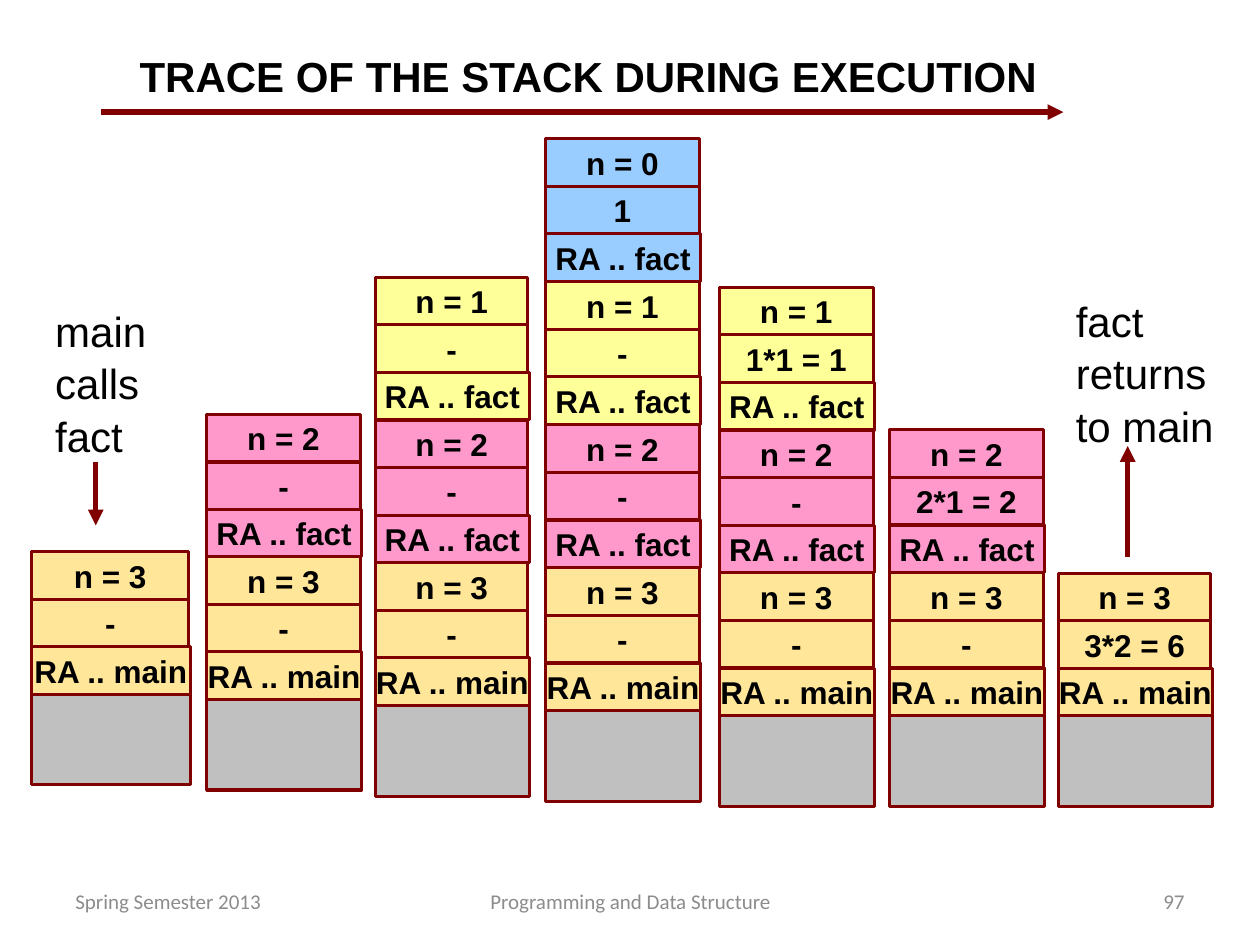
from dataclasses import dataclass

from lxml import etree
from pptx import Presentation
from pptx import util as u
from pptx.dml.color import RGBColor
from pptx.enum import shapes, text
from pptx.oxml.ns import qn

Inches = u.Inches
ALIGN, ANCHOR = text.PP_ALIGN, text.MSO_ANCHOR


@dataclass(frozen=True)
class Theme:
    font: str = "Arial"
    footer_font: str = "Calibri"
    ink: str = "000000"
    muted: str = "8C8C8C"
    line: str = "800000"
    base: str = "C0C0C0"
    frames: tuple = ("FFE699", "FF99CC", "FFFF99", "99CCFF")
    heading_size: int = 24
    cell_size: int = 18
    footer_size: int = 12
    border: float = 1.75
    arrow: float = 3


THEME = Theme()
BASE_HEIGHT = 0.72
RA_OVERHANG = 0.01

# Box (left, top, width, height) of each stack, and the (n, value) of its
# frames from the bottom up.
STACKS = [
    ((0.25, 4.38, 1.26, 1.85), [(3, "-")]),
    ((1.64, 3.29, 1.23, 2.98), [(3, "-"), (2, "-")]),
    ((2.98, 2.20, 1.22, 4.12), [(3, "-"), (2, "-"), (1, "-")]),
    ((4.33, 1.10, 1.23, 5.26), [(3, "-"), (2, "-"), (1, "-"), (0, "1")]),
    ((5.71, 2.28, 1.23, 4.12), [(3, "-"), (2, "-"), (1, "1*1 = 1")]),
    ((7.06, 3.41, 1.23, 2.99), [(3, "-"), (2, "2*1 = 2")]),
    ((8.40, 4.55, 1.22, 1.85), [(3, "3*2 = 6")]),
]


def inches(box):
    return [Inches(v) for v in box]


def write(sp, words, *, size, font=THEME.font, color=THEME.ink, bold=False,
          align=ALIGN.LEFT, anchor=ANCHOR.TOP, wrap=True, spacing=1.0):
    tf = sp.text_frame
    tf.word_wrap = wrap
    tf.auto_size = text.MSO_AUTO_SIZE.NONE
    tf.vertical_anchor = anchor
    p = tf.paragraphs[0]
    p.alignment = align
    p.line_spacing = spacing
    r = p.add_run()
    r.text = words
    r.font.name, r.font.size, r.font.bold = font, u.Pt(size), bold
    r.font.color.rgb = RGBColor.from_string(color)


def add_arrow(parent, start, end):
    line = parent.add_connector(shapes.MSO_CONNECTOR.STRAIGHT,
                                *inches(start), *inches(end))
    line.line.color.rgb = RGBColor.from_string(THEME.line)
    line.line.width = u.Pt(THEME.arrow)
    etree.SubElement(line.line._get_or_add_ln(), qn("a:tailEnd"), type="triangle")
    etree.SubElement(line._element.spPr, qn("a:effectLst"))


def add_cell(parent, box, fill, words=""):
    sp = parent.add_shape(shapes.MSO_SHAPE.RECTANGLE, *inches(box))
    sp.shadow.inherit = False
    sp.fill.solid()
    sp.fill.fore_color.rgb = RGBColor.from_string(fill)
    sp.line.color.rgb = RGBColor.from_string(THEME.line)
    sp.line.width = u.Pt(THEME.border)
    if words:
        write(sp, words, size=THEME.cell_size, bold=True, wrap=False,
              align=ALIGN.CENTER, anchor=ANCHOR.MIDDLE)


def add_stack(slide, box, frames):
    """Draw the grey base, then three cells for each frame, upwards."""
    left, top, width, height = box
    group = slide.shapes.add_group_shape().shapes
    y = top + height - BASE_HEIGHT
    row = (y - top) / (3 * len(frames))
    add_cell(group, (left, y, width, BASE_HEIGHT), THEME.base)
    for level, (n, value) in enumerate(frames):
        caller = "fact" if level else "main"
        cells = [(f"RA .. {caller}", width),
                 (value, width - RA_OVERHANG),
                 (f"n = {n}", width - RA_OVERHANG)]
        for words, cell_width in cells:
            y -= row
            add_cell(group, (left, y, cell_width, row), THEME.frames[level], words)


def add_title(slide, box):
    title = slide.shapes.title
    title.left, title.top, title.width, title.height = inches(box)
    write(title, "TRACE OF THE STACK DURING EXECUTION", size=THEME.heading_size,
          bold=True, align=ALIGN.CENTER, anchor=ANCHOR.MIDDLE)


def add_note(slide, box, words, start, end):
    """Place a remark with the arrow that links it to a stack."""
    write(slide.shapes.add_textbox(*inches(box)), words,
          size=THEME.heading_size, spacing=1.04)
    add_arrow(slide.shapes, start, end)


def add_footer(slide, top, height):
    parts = [(0.5, 2.33, "Spring Semester 2013", ALIGN.LEFT),
             (3.42, 3.17, "Programming and Data Structure", ALIGN.CENTER),
             (7.17, 2.33, "97", ALIGN.RIGHT)]
    for left, width, words, align in parts:
        sp = slide.shapes.add_textbox(*inches((left, top, width, height)))
        write(sp, words, size=THEME.footer_size, font=THEME.footer_font,
              color=THEME.muted, align=align, anchor=ANCHOR.MIDDLE)


def main():
    prs = Presentation()
    prs.slide_width, prs.slide_height = Inches(10), Inches(7.5)
    slide = prs.slides.add_slide(prs.slide_layouts[5])
    add_footer(slide, 6.95, 0.4)
    for box, frames in STACKS:
        add_stack(slide, box, frames)
    add_arrow(slide.shapes, (0.8, 0.89), (8.44, 0.89))
    add_title(slide, (0.93, 0.35, 7.48, 0.5))
    add_note(slide, (0.34, 2.36, 1.43, 1.3), "main calls fact",
             (0.76, 3.67), (0.76, 4.17))
    add_note(slide, (8.44, 2.28, 1.56, 1.3), "fact returns to main",
             (8.95, 4.42), (8.95, 3.54))
    prs.save("out.pptx")


if __name__ == "__main__":
    main()
